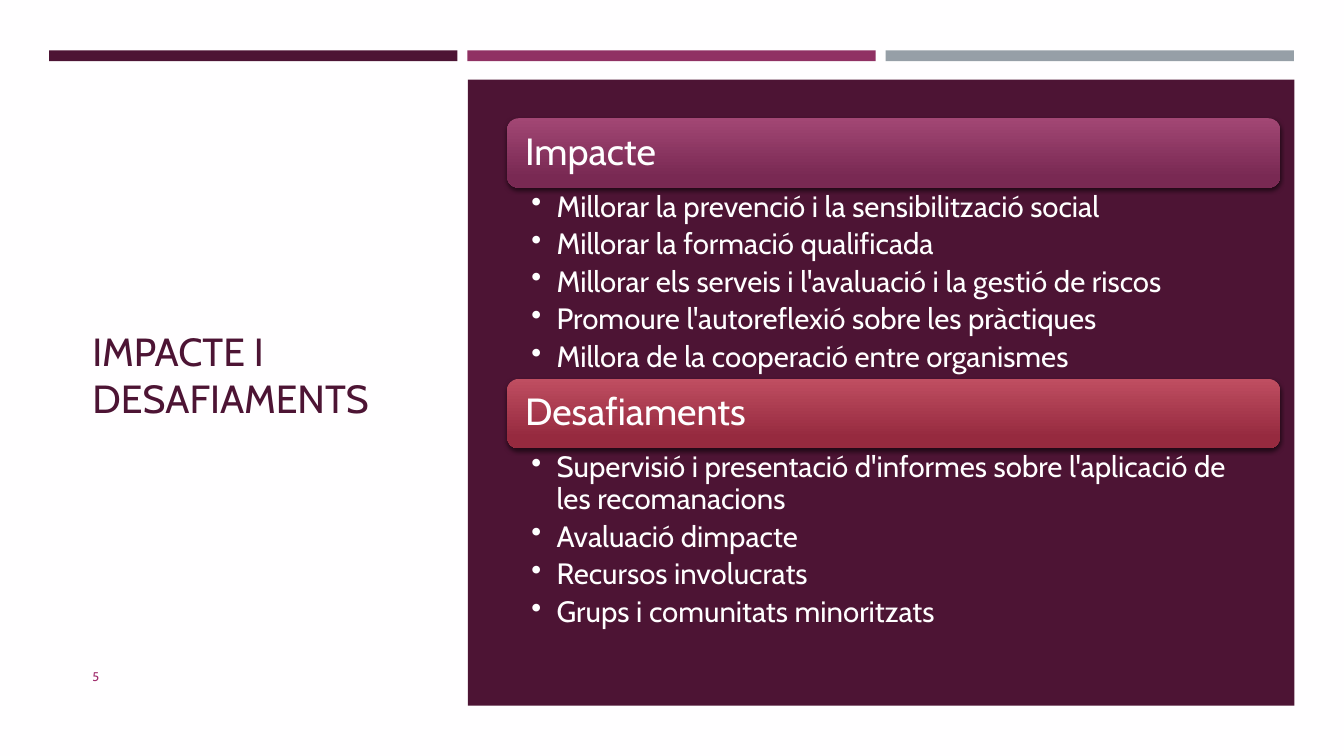
from dataclasses import dataclass

from lxml import etree
from pptx import Presentation
from pptx.dml.color import RGBColor
from pptx.enum.shapes import MSO_SHAPE
from pptx.enum.text import MSO_ANCHOR, MSO_AUTO_SIZE, PP_ALIGN
from pptx.oxml.ns import qn
from pptx.util import Cm, Pt


@dataclass(frozen=True)
class Theme:
    font: str = "Cabin"
    background: str = "FFFEFF"
    dark: str = "4D1434"
    plum: str = "903163"
    gray: str = "969FA7"
    number: str = "9F296B"
    light: str = "FFFFFF"
    shadow: str = "000000"
    impact: tuple = ("A24774", "792953")
    challenge: tuple = ("BF4E61", "962A3F")
    title_size: float = 28
    header_size: float = 27
    body_size: float = 21
    number_size: float = 9


class SlideBuilder:
    def __init__(self, slide, theme):
        self.slide = slide
        self.theme = theme
        fill = slide.background.fill
        fill.solid()
        fill.fore_color.rgb = RGBColor.from_string(theme.background)

    def fill_text(self, frame, lines, size, color, anchor, insets=(0.25, 0.13, 0.25, 0.13),
                  spacing=1.0, after=0.0, bullets=False):
        frame.word_wrap = True
        frame.auto_size = MSO_AUTO_SIZE.NONE
        frame.vertical_anchor = anchor
        (frame.margin_left, frame.margin_top,
         frame.margin_right, frame.margin_bottom) = [Cm(inset) for inset in insets]
        for index, line in enumerate(lines):
            paragraph = frame.add_paragraph() if index else frame.paragraphs[0]
            paragraph.alignment = PP_ALIGN.LEFT
            paragraph.line_spacing = spacing
            paragraph.space_after = Pt(after)
            if bullets:
                self.add_bullet(paragraph)
            run = paragraph.add_run()
            run.text = line
            run.font.name = self.theme.font
            run.font.size = Pt(size)
            run.font.color.rgb = RGBColor.from_string(color)

    def add_bullet(self, paragraph):
        properties = paragraph._p.get_or_add_pPr()
        properties.set("marL", str(Cm(0.64)))
        properties.set("indent", str(-Cm(0.64)))
        etree.SubElement(properties, qn("a:buChar"), char="•")

    def title(self, text, left, top, width, height):
        title = self.slide.shapes.title
        title.left, title.top = Cm(left), Cm(top)
        title.width, title.height = Cm(width), Cm(height)
        self.fill_text(title.text_frame, [text], self.theme.title_size,
                       self.theme.dark, MSO_ANCHOR.MIDDLE)

    def shape(self, kind, left, top, width, height):
        shape = self.slide.shapes.add_shape(kind, Cm(left), Cm(top), Cm(width), Cm(height))
        shape.line.fill.background()
        shape.shadow.inherit = False
        return shape

    def rectangle(self, color, left, top, width, height):
        shape = self.shape(MSO_SHAPE.RECTANGLE, left, top, width, height)
        shape.fill.solid()
        shape.fill.fore_color.rgb = RGBColor.from_string(color)

    def text_box(self, lines, left, top, width, height, **style):
        box = self.slide.shapes.add_textbox(Cm(left), Cm(top), Cm(width), Cm(height))
        self.fill_text(box.text_frame, lines, **style)

    def header(self, text, colors, left, top, width, height):
        shape = self.shape(MSO_SHAPE.ROUNDED_RECTANGLE, left, top, width, height)
        shape.fill.gradient()
        shape.fill.gradient_angle = 270
        for stop, color, position in zip(shape.fill.gradient_stops, colors, (0, 0.84)):
            stop.color.rgb = RGBColor.from_string(color)
            stop.position = position
        self.add_shadow(shape)
        self.fill_text(shape.text_frame, [text], self.theme.header_size, self.theme.light,
                       MSO_ANCHOR.MIDDLE, insets=(0.37, 0.36, 0.37, 0.36), spacing=0.9)

    def add_shadow(self, shape):
        effects = shape._element.spPr.find(qn("a:effectLst"))
        shadow = etree.SubElement(effects, qn("a:outerShdw"), blurRad=str(Pt(3)),
                                  dist=str(Pt(2)), dir="5400000", rotWithShape="0")
        color = etree.SubElement(shadow, qn("a:srgbClr"), val=self.theme.shadow)
        etree.SubElement(color, qn("a:alpha"), val="55000")

    def section(self, heading, colors, points, top, body_height):
        left, width, header_height = 12.78, 19.48, 1.75
        self.header(heading, colors, left, top, width, header_height)
        self.text_box(points, left, top + header_height, width, body_height,
                      size=self.theme.body_size, color=self.theme.light,
                      anchor=MSO_ANCHOR.TOP, insets=(0.61, 0.1, 0.53, 0.1),
                      spacing=0.9, after=4.2, bullets=True)


def main():
    presentation = Presentation()
    presentation.slide_width, presentation.slide_height = Cm(33.87), Cm(19.05)
    theme = Theme()
    builder = SlideBuilder(presentation.slides.add_slide(presentation.slide_layouts[5]), theme)

    # Title
    builder.title("IMPACTE I DESAFIAMENTS", 2.08, 2.9, 8.48, 13.08)

    # Top bars and content panel
    for column, color in enumerate((theme.dark, theme.plum, theme.gray)):
        builder.rectangle(color, 1.24 + column * 10.54, 1.27, 10.29, 0.27)
    builder.rectangle(theme.dark, 11.79, 2.01, 20.83, 15.77)

    # Slide number
    builder.text_box(["5"], 2.08, 16.54, 1.88, 1.02, size=theme.number_size,
                     color=theme.number, anchor=MSO_ANCHOR.MIDDLE, after=6)

    # Sections
    builder.section("Impacte", theme.impact, [
        "Millorar la prevenció i la sensibilització social",
        "Millorar la formació qualificada",
        "Millorar els serveis i l'avaluació i la gestió de riscos",
        "Promoure l'autoreflexió sobre les pràctiques",
        "Millora de la cooperació entre organismes",
    ], 2.98, 4.8)
    builder.section("Desafiaments", theme.challenge, [
        "Supervisió i presentació d'informes sobre l'aplicació de les recomanacions",
        "Avaluació dimpacte",
        "Recursos involucrats",
        "Grups i comunitats minoritzats",
    ], 9.55, 4.57)

    presentation.save("out.pptx")


if __name__ == "__main__":
    main()
